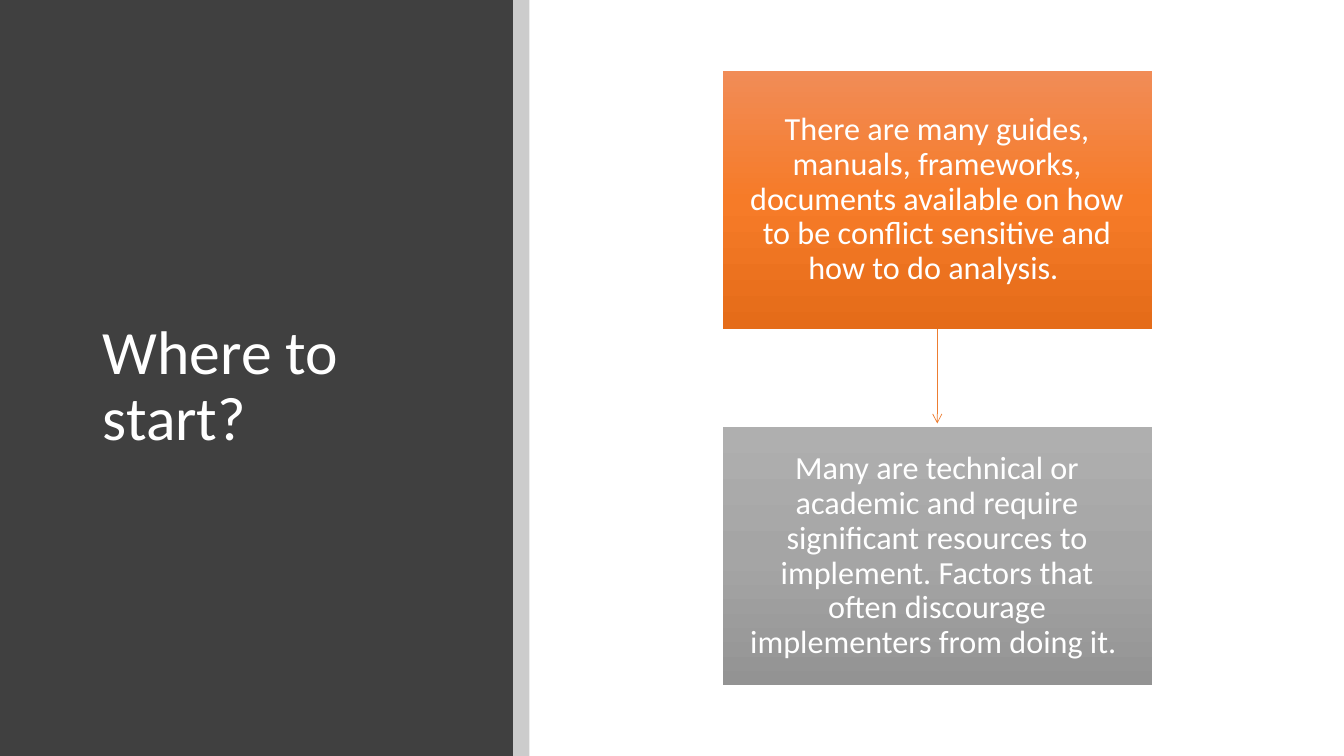
from copy import deepcopy

from lxml import etree
from pptx import Presentation
from pptx.dml.color import RGBColor
from pptx.enum.shapes import MSO_CONNECTOR, MSO_SHAPE
from pptx.enum.text import MSO_ANCHOR, PP_ALIGN
from pptx.oxml.ns import qn
from pptx.util import Cm, Pt

RECTANGLE = MSO_SHAPE.RECTANGLE
STRAIGHT = MSO_CONNECTOR.STRAIGHT
MIDDLE = MSO_ANCHOR.MIDDLE
LEFT, CENTER = PP_ALIGN.LEFT, PP_ALIGN.CENTER

WIDTH, HEIGHT = 33.87, 19.05
PANEL_WIDTH, STRIP_WIDTH = 12.93, 0.41
STEP_LEFT, STEP_TOP, STEP_WIDTH, STEP_HEIGHT = 18.21, 1.78, 10.82, 6.5
STEP_PITCH = 8.99
ARROW_GAP = 0.1

COLORS = {
    "panel": "404040",
    "strip": "CCCCCC",
    "text": "FFFFFF",
    "arrow": "ED7D31",
}
STEPS = [
    ("There are many guides, manuals, frameworks, documents available on how "
     "to be conflict sensitive and how to do analysis. ",
     ["F18C57", "F67B28", "E56C19"]),
    ("Many are technical or academic and require significant resources to "
     "implement. Factors that often discourage implementers from doing it. ",
     ["AFAFAF", "A5A5A5", "939393"]),
]


def rgb(value):
    return RGBColor.from_string(value)


def add_rectangle(page, left, top, width, height, color=None):
    box = page.shapes.add_shape(
        RECTANGLE, Cm(left), Cm(top), Cm(width), Cm(height))
    box.shadow.inherit = False
    box.line.fill.background()
    if color:
        box.fill.solid()
        box.fill.fore_color.rgb = rgb(color)
    return box


def fill_gradient(box, colors):
    """Fill a box from top to bottom with evenly spaced colours."""
    box.fill.gradient()
    box.fill.gradient_angle = 270
    stop_list = box.element.spPr.find(".//" + qn("a:gsLst"))
    for _ in colors[2:]:
        stop_list.insert(1, deepcopy(stop_list[0]))
    for index, (stop, color) in enumerate(zip(box.fill.gradient_stops, colors)):
        stop.position = index / (len(colors) - 1)
        stop.color.rgb = rgb(color)


def write_text(box, text, size, align=LEFT, margins=(0.25, 0.13)):
    frame = box.text_frame
    frame.word_wrap = True
    frame.vertical_anchor = MIDDLE
    frame.margin_left = frame.margin_right = Cm(margins[0])
    frame.margin_top = frame.margin_bottom = Cm(margins[1])
    para = frame.paragraphs[0]
    para.alignment = align
    para.line_spacing = 0.9
    span = para.add_run()
    span.text = text
    span.font.size = Pt(size)
    span.font.name = "Calibri"
    span.font.color.rgb = rgb(COLORS["text"])


def add_arrow(page, center, top, bottom):
    arrow = page.shapes.add_connector(
        STRAIGHT, Cm(center), Cm(top), Cm(center), Cm(bottom))
    arrow.line.color.rgb = rgb(COLORS["arrow"])
    arrow.line.width = Pt(0.5)
    etree.SubElement(arrow.line._get_or_add_ln(), qn("a:tailEnd"), type="arrow")
    etree.SubElement(arrow._element.spPr, qn("a:effectLst"))


def add_step(page, top, text, colors):
    box = add_rectangle(page, STEP_LEFT, top, STEP_WIDTH, STEP_HEIGHT)
    fill_gradient(box, colors)
    write_text(box, text, 23, align=CENTER, margins=(0.53, 0.56))


def main():
    deck = Presentation()
    deck.slide_width, deck.slide_height = Cm(WIDTH), Cm(HEIGHT)
    page = deck.slides.add_slide(deck.slide_layouts[6])

    add_rectangle(page, 0, 0, PANEL_WIDTH, HEIGHT, COLORS["panel"])
    add_rectangle(page, PANEL_WIDTH, 0, STRIP_WIDTH, HEIGHT, COLORS["strip"])
    title = page.shapes.add_textbox(Cm(2.34), Cm(2.26), Cm(9.27), Cm(15.01))
    write_text(title, "Where to start?", 44)

    for index, (text, colors) in enumerate(STEPS):
        top = STEP_TOP + index * STEP_PITCH
        if index:
            add_arrow(page, STEP_LEFT + STEP_WIDTH / 2,
                      top - STEP_PITCH + STEP_HEIGHT, top - ARROW_GAP)
        add_step(page, top, text, colors)

    deck.save("out.pptx")


if __name__ == "__main__":
    main()
